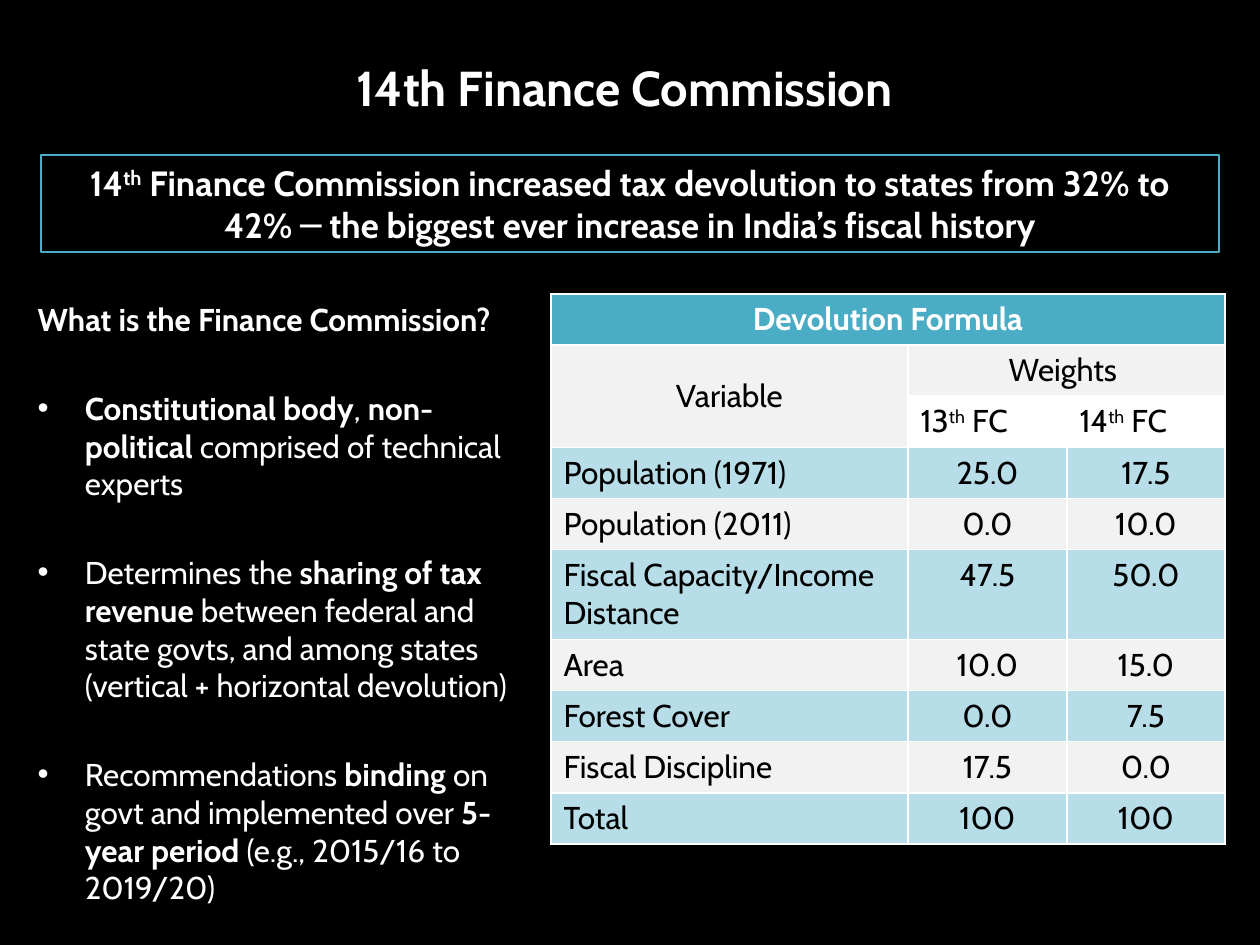
from pptx import Presentation
from pptx.dml.color import RGBColor
from pptx.enum.shapes import MSO_SHAPE
from pptx.enum.text import MSO_ANCHOR, MSO_AUTO_SIZE, PP_ALIGN
from pptx.util import Emu, Pt

RECTANGLE = MSO_SHAPE.RECTANGLE
LEFT, CENTER = PP_ALIGN.LEFT, PP_ALIGN.CENTER
TOP, MIDDLE = MSO_ANCHOR.TOP, MSO_ANCHOR.MIDDLE
NO_AUTOFIT, GROW = MSO_AUTO_SIZE.NONE, MSO_AUTO_SIZE.SHAPE_TO_FIT_TEXT

PX_PER_INCH = 126
FONT = "Cabin"
BLACK, WHITE = "000000", "FFFFFF"
TEAL, PALE_TEAL, PALE_GREY = "4BACC6", "B7DEE8", "F2F2F2"

BODY_HEADING = "What is the Finance Commission?"
# Text between bars is bold.
BODY_POINTS = [
    "|Constitutional body|, |non-political| comprised of technical experts",
    "Determines the |sharing of tax revenue| between federal and state govts, "
    "and among states (vertical + horizontal devolution)",
    "Recommendations |binding| on govt and implemented over |5-year period| "
    "(e.g., 2015/16 to 2019/20)",
]
# Text between bars is superscript.
CALLOUT = ("14|th| Finance Commission increased tax devolution to states from "
           "32% to 42% ─ the biggest ever increase in India’s fiscal history")
COMMISSIONS = ["13|th| FC", "14|th| FC"]
WEIGHTS = [
    ("Population (1971)", "25.0", "17.5"),
    ("Population (2011)", "0.0", "10.0"),
    ("Fiscal Capacity/Income Distance", "47.5", "50.0"),
    ("Area", "10.0", "15.0"),
    ("Forest Cover", "0.0", "7.5"),
    ("Fiscal Discipline", "17.5", "0.0"),
    ("Total", "100", "100"),
]
COLUMN_WIDTHS = [357, 159, 158]
ROW_HEIGHT, TWO_LINE_ROW_HEIGHT = 51, 90
TWO_LINE_ROW = 5


def px(length):
    return Emu(round(length * 914400 / PX_PER_INCH))


def color(hex_string):
    return RGBColor.from_string(hex_string)


def place(shape, box):
    shape.left, shape.top, shape.width, shape.height = map(px, box)


def embolden(run):
    run.font.bold = True


def raise_text(run):
    run.font.bold = None
    run._r.get_or_add_rPr().set("baseline", "30000")


def write(paragraph, text, size, hex_color, bold=False, align=LEFT, mark=raise_text):
    """Write text, applying mark to each part that stands between bars."""
    paragraph.alignment = align
    font = paragraph.font
    font.name, font.size, font.bold = FONT, Pt(size), bold
    font.color.rgb = color(hex_color)
    for index, part in enumerate(text.split("|")):
        if part:
            run = paragraph.add_run()
            run.text = part
            if index % 2:
                mark(run)


def add_title(slide, box):
    title = slide.shapes.title
    place(title, box)
    frame = title.text_frame
    frame.auto_size = NO_AUTOFIT
    frame.vertical_anchor = MIDDLE
    write(frame.paragraphs[0], "14th Finance Commission ", 28, WHITE, True, CENTER)


def add_body(slide, box):
    body = slide.placeholders[1]
    place(body, box)
    frame = body.text_frame
    frame.auto_size = NO_AUTOFIT
    heading = frame.paragraphs[0]
    write(heading, BODY_HEADING, 18, WHITE, bold=True)
    properties = heading._p.get_or_add_pPr()
    properties.set("marL", "0")
    properties.set("indent", "0")
    # The bullet setting has to stand before the default run properties.
    no_bullet = properties.makeelement(
        "{http://schemas.openxmlformats.org/drawingml/2006/main}buNone", {})
    properties.insert(0, no_bullet)
    for text in BODY_POINTS:
        point = frame.add_paragraph()
        write(point, text, 18, WHITE, mark=embolden)
        point.space_before = Pt(29)


def add_callout(slide, box):
    callout = slide.shapes.add_shape(RECTANGLE, *map(px, box))
    callout.shadow.inherit = False
    callout.fill.background()
    callout.line.color.rgb = color(TEAL)
    callout.line.width = Pt(0.75)
    frame = callout.text_frame
    frame.word_wrap = True
    frame.auto_size = GROW
    frame.vertical_anchor = TOP
    write(frame.paragraphs[0], CALLOUT, 20, WHITE, True, CENTER)


def add_devolution_table(slide, left, top):
    rows = [
        ("Devolution Formula", "", ""),
        ("Variable", "Weights ", ""),
        ("", *COMMISSIONS),
        *WEIGHTS,
    ]
    heights = [TWO_LINE_ROW_HEIGHT if row == TWO_LINE_ROW else ROW_HEIGHT
               for row in range(len(rows))]
    box = (left, top, sum(COLUMN_WIDTHS), sum(heights))
    table = slide.shapes.add_table(
        len(rows), len(COLUMN_WIDTHS), *map(px, box)).table
    table.horz_banding = False
    for column, width in zip(table.columns, COLUMN_WIDTHS):
        column.width = px(width)
    for row, height in zip(table.rows, heights):
        row.height = px(height)

    fills = [TEAL, PALE_GREY, WHITE] + [
        PALE_GREY if index % 2 else PALE_TEAL for index in range(len(WEIGHTS))]
    for row, (texts, fill) in enumerate(zip(rows, fills)):
        for column, text in enumerate(texts):
            cell = table.cell(row, column)
            cell.fill.solid()
            cell.fill.fore_color.rgb = color(fill)
            is_title = row == 0
            centered = row < 2 or (row > 2 and column > 0)
            write(cell.text_frame.paragraphs[0], text, 18,
                  WHITE if is_title else BLACK, is_title,
                  CENTER if centered else LEFT)

    table.cell(0, 0).merge(table.cell(0, 2))
    table.cell(1, 0).merge(table.cell(2, 0))
    table.cell(1, 1).merge(table.cell(1, 2))
    table.cell(1, 0).vertical_anchor = MIDDLE


def main():
    presentation = Presentation()
    presentation.slide_width, presentation.slide_height = px(1260), px(945)
    slide = presentation.slides.add_slide(presentation.slide_layouts[1])
    slide.background.fill.solid()
    slide.background.fill.fore_color.rgb = color(BLACK)
    add_title(slide, (63, 38, 1134, 97))
    add_body(slide, (25, 294, 507, 548))
    add_devolution_table(slide, 551, 294)
    add_callout(slide, (41, 155, 1178, 97))
    presentation.save("out.pptx")


if __name__ == "__main__":
    main()
